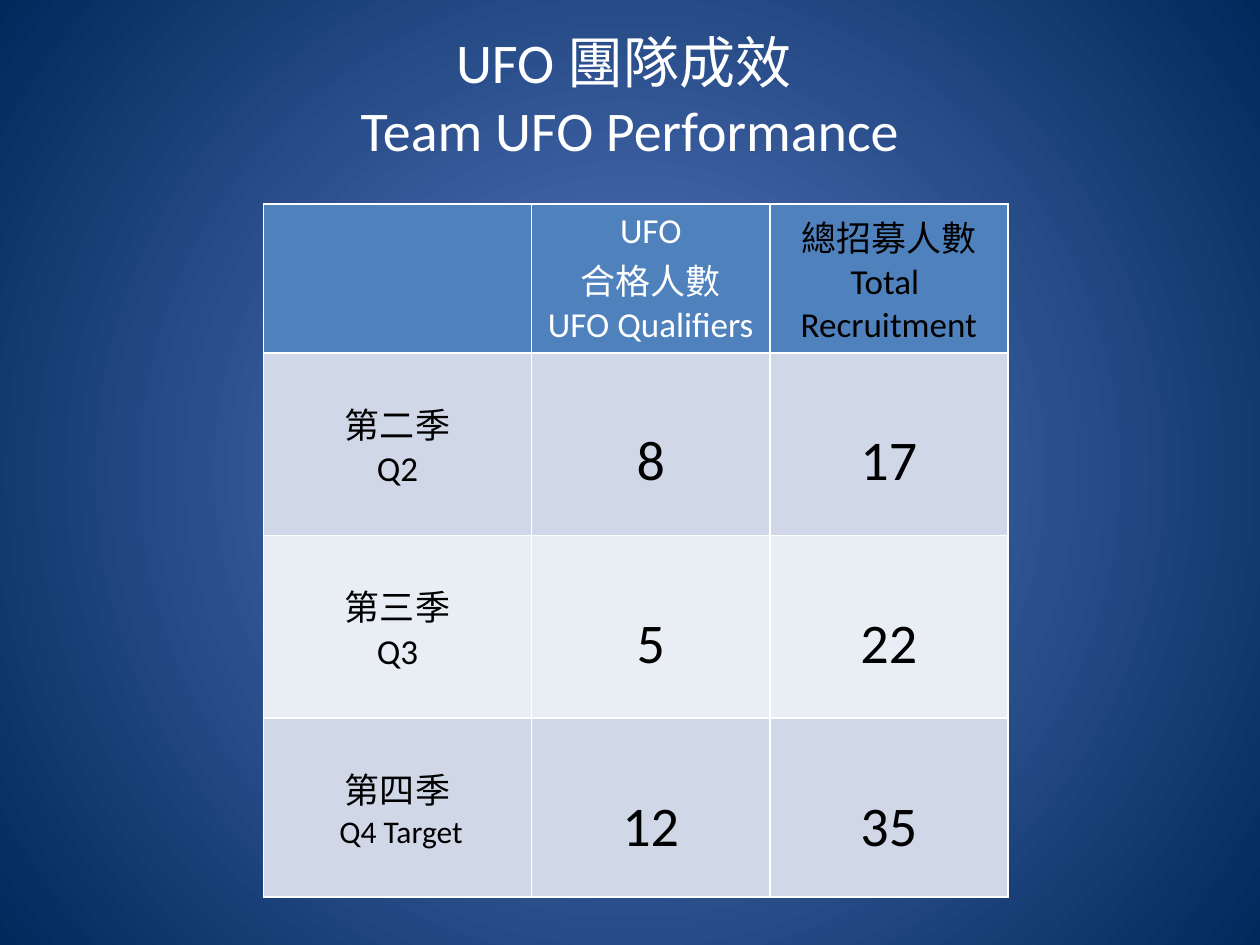
import pptx
import pptx.util
import pptx.dml.color
import pptx.enum.text
import pptx.oxml
import pptx.oxml.ns
import lxml.etree

Inches, Pt = pptx.util.Inches, pptx.util.Pt
ALIGN = pptx.enum.text.PP_ALIGN
ANCHOR = pptx.enum.text.MSO_ANCHOR
NS = pptx.oxml.ns.nsdecls("a")
COLORS = {"glow": "5E7CC5", "edge": "00295C", "white": "FFFFFF",
          "black": "000000", "head": "4F81BD", "odd": "D0D8E8",
          "even": "E9EDF4"}


def rgb(name):
    return pptx.dml.color.RGBColor.from_string(COLORS[name])


def write(frame, lines, sizes, color, space=None):
    """Fill a text frame with centred lines, one paragraph each."""
    for i, (line, size) in enumerate(zip(lines, sizes)):
        para = frame.paragraphs[0] if i == 0 else frame.add_paragraph()
        para.text = line
        para.alignment = ALIGN.CENTER
        if space:
            para.line_spacing = space
        para.font.name = "Calibri"
        para.font.size = Pt(size)
        para.font.color.rgb = rgb(color)


deck = pptx.Presentation()
deck.slide_width, deck.slide_height = Inches(10), Inches(7.5)
slide = deck.slides.add_slide(deck.slide_layouts[6])

# Background: circular gradient from the centre
fill = slide.background.fill
fill.gradient()
for stop, name, place in zip(fill.gradient_stops, ("glow", "edge"), (0, 1)):
    stop.color.rgb = rgb(name)
    stop.position = place
line = next(slide.element.iter(pptx.oxml.ns.qn("a:lin")))
line.getparent().replace(line, pptx.oxml.parse_xml(
    f'<a:path {NS} path="circle"><a:fillToRect l="50000" t="50000" '
    'r="50000" b="50000"/></a:path>'))

# Title
title = slide.shapes.add_textbox(Inches(0.5), Inches(0.13),
                                 Inches(9), Inches(1.25)).text_frame
title.word_wrap = True
title.vertical_anchor = ANCHOR.MIDDLE
write(title, ["UFO 團隊成效 \vTeam UFO Performance"], [32], "white")

# Table content: lines, sizes and colour for each cell
heads = [([], [], "white"),
         (["UFO", "合格人數", "UFO Qualifiers"], [20] * 3, "white"),
         (["總招募人數", "Total ", "Recruitment"], [20] * 3, "black")]
terms = [("第二季", "Q2", 20, "8", "17"),
         ("第三季", "Q3", 20, "5", "22"),
         ("第四季", " Q4 Target", 18, "12", "35")]
rows = [heads]
for name, sub, size, *counts in terms:
    rows.append([([name, sub], [20, size], "black")]
                + [([count], [32], "black") for count in counts])

# Table grid
widths, heights = [2.13, 1.89, 1.89], [1.18, 1.45, 1.45, 1.42]
table = slide.shapes.add_table(
    len(heights), len(widths), Inches(2.09), Inches(1.62),
    Inches(sum(widths)), Inches(sum(heights))).table
for col, width in zip(table.columns, widths):
    col.width = Inches(width)
for row, height in zip(table.rows, heights):
    row.height = Inches(height)

# Cells: text, white borders, banded fill
for r, row in enumerate(rows):
    band = "head" if r == 0 else "odd" if r % 2 else "even"
    for c, (lines, sizes, color) in enumerate(row):
        cell = table.cell(r, c)
        count = r > 0 and c > 0
        cell.vertical_anchor = ANCHOR.TOP if count else ANCHOR.MIDDLE
        write(cell.text_frame, lines, sizes, color, 2.0 if count else None)
        props = cell._tc.get_or_add_tcPr()
        for side in ("lnL", "lnR", "lnT", "lnB"):
            props.append(pptx.oxml.parse_xml(
                f'<a:{side} {NS} w="12700"><a:solidFill><a:srgbClr '
                f'val="{COLORS["white"]}"/></a:solidFill></a:{side}>'))
        cell.fill.solid()
        cell.fill.fore_color.rgb = rgb(band)

deck.save("out.pptx")
